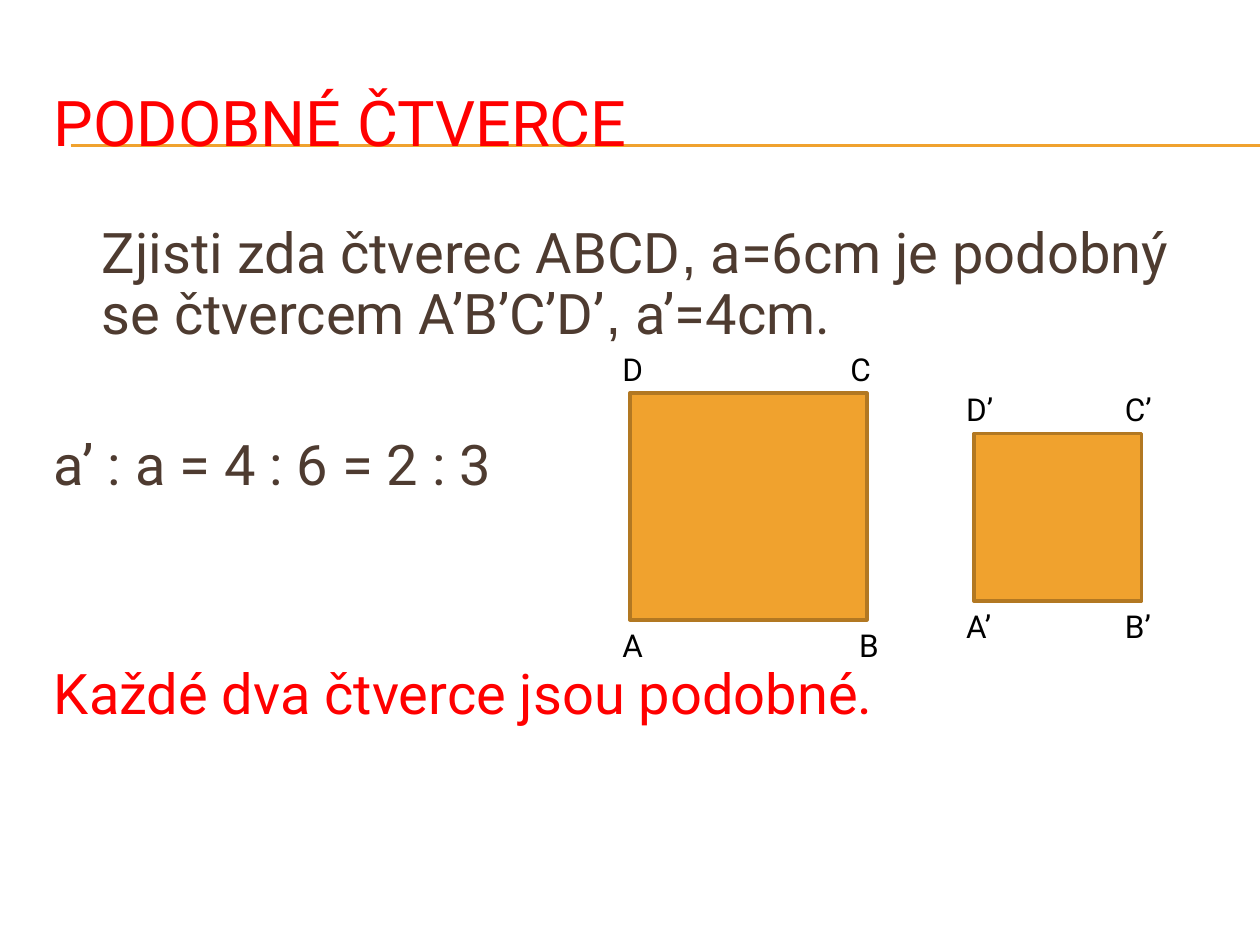
import pptx
import pptx.util
import pptx.dml.color
import pptx.enum.shapes
import pptx.enum.text
import pptx.oxml.ns
import lxml.etree

RED = pptx.dml.color.RGBColor(0xFF, 0x00, 0x00)
BROWN = pptx.dml.color.RGBColor(0x4E, 0x3B, 0x30)
BLACK = pptx.dml.color.RGBColor(0x00, 0x00, 0x00)
ORANGE = pptx.dml.color.RGBColor(0xF0, 0xA2, 0x2E)
OCHRE = pptx.dml.color.RGBColor(0xB2, 0x78, 0x22)
COLUMNS, ROWS = 100, 75


def write(p, text, size=32, color=BROWN, font="Roboto", before=0, spacing=None, indent=0):
    p.space_before = pptx.util.Pt(before)
    if spacing:
        p.line_spacing = spacing
    if indent:
        p._p.get_or_add_pPr().set("marL", str(pptx.util.Inches(indent)))
    for i, part in enumerate(text.split(",")):
        pieces = [(",", "Arial")] if i else []
        for piece, name in pieces + [(part, font)]:
            r = p.add_run()
            r.text = piece
            r.font.name = name
            r.font.size = pptx.util.Pt(size)
            r.font.color.rgb = color


class Board:
    def __init__(self, prs):
        self.cell_w = prs.slide_width / COLUMNS
        self.cell_h = prs.slide_height / ROWS
        self.s = prs.slides.add_slide(prs.slide_layouts[6])

    def box(self, col, row, cols, rows):
        return (round(col * self.cell_w), round(row * self.cell_h),
                round(cols * self.cell_w), round(rows * self.cell_h))

    def rule(self, col, row):
        x, y, width, _ = self.box(col, row, COLUMNS - col, 0)
        line = self.s.shapes.add_connector(
            pptx.enum.shapes.MSO_CONNECTOR.STRAIGHT, x, y, x + width, y)
        line.line.color.rgb = ORANGE
        line.line.width = pptx.util.Pt(0.75)
        lxml.etree.SubElement(line._element.spPr, pptx.oxml.ns.qn("a:effectLst"))

    def text(self, col, row, cols, rows, anchor=pptx.enum.text.MSO_ANCHOR.TOP):
        tf = self.s.shapes.add_textbox(*self.box(col, row, cols, rows)).text_frame
        tf.word_wrap = True
        tf.vertical_anchor = anchor
        return tf

    def label(self, col, row, text):
        tf = self.text(col, row, 3.9 if len(text) == 1 else 5.5, 4)
        tf.auto_size = pptx.enum.text.MSO_AUTO_SIZE.SHAPE_TO_FIT_TEXT
        write(tf.paragraphs[0], text, size=18, color=BLACK)

    def square(self, col, row, cols, rows, mark="", b_shift=-2.3):
        sp = self.s.shapes.add_shape(
            pptx.enum.shapes.MSO_SHAPE.RECTANGLE, *self.box(col, row, cols, rows))
        sp.shadow.inherit = False
        sp.fill.solid()
        sp.fill.fore_color.rgb = ORANGE
        sp.line.color.rgb = OCHRE
        sp.line.width = pptx.util.Pt(2)
        left, right, above, below = col - 1.6, col + cols, row - 3.9, row + rows
        self.label(left, below, "A" + mark)
        self.label(right + b_shift, below, "B" + mark)
        self.label(right - 2.3, above, "C" + mark)
        self.label(left, above, "D" + mark)


def main():
    prs = pptx.Presentation()
    prs.slide_width = pptx.util.Inches(10)
    prs.slide_height = pptx.util.Inches(7.5)
    board = Board(prs)

    for row in (11.5, 11.6):
        board.rule(5.6, row)

    title = board.text(3.3, 5, 95, 9.2, pptx.enum.text.MSO_ANCHOR.MIDDLE)
    write(title.paragraphs[0], "PODOBNÉ ČTVERCE", size=36, color=RED)

    body = board.text(3.3, 17, 95, 49.5)
    body.margin_top = pptx.util.Inches(0.09)
    write(body.paragraphs[0],
          "Zjisti zda čtverec ABCD, a=6cm je podobný se čtvercem A’B’C’D’, a’=4cm.",
          spacing=0.9, indent=0.38)
    write(body.add_paragraph(), "a’ : a = 4 : 6 = 2 : 3", before=52, spacing=0.9)
    write(body.add_paragraph(), "Každé dva čtverce jsou podobné.",
          color=RED, before=96, spacing=0.9)

    board.square(50, 31.2, 18.8, 18, b_shift=-1.6)
    board.square(77.3, 34.4, 13.3, 13.3, mark="’")

    prs.save("out.pptx")


if __name__ == "__main__":
    main()
